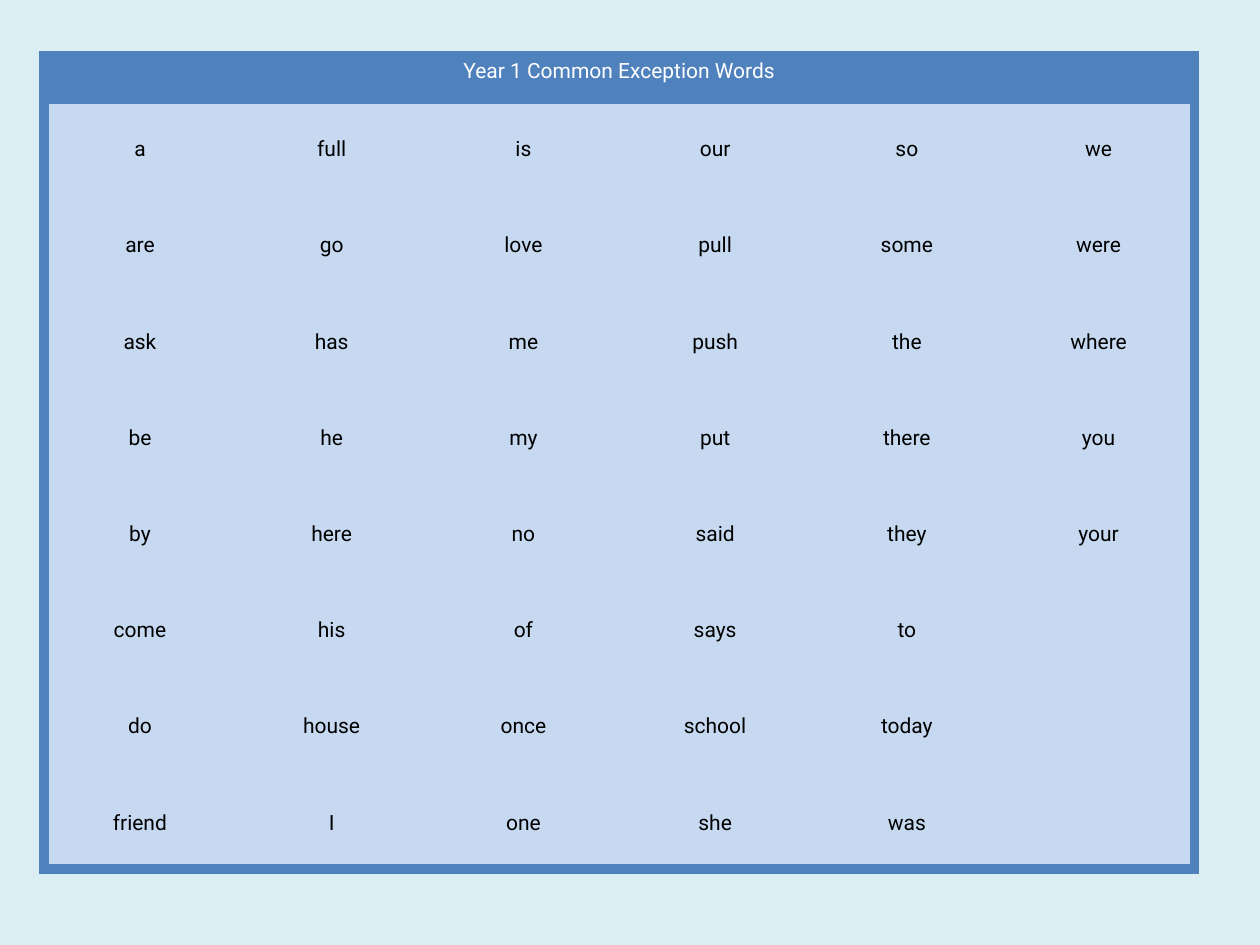
from lxml import etree
from pptx import Presentation
from pptx import util as u
from pptx.dml.color import RGBColor
from pptx.enum import text
from pptx.oxml.ns import qn

COLORS = {"background": "DBEEF4", "frame": "4F81BD", "body": "C6D9F1",
          "heading": "FFFFFF", "word": "000000"}
FONT = "Roboto"
HEADING = "Year 1 Common Exception Words"
# Alphabetical order runs down each column
WORD_COLUMNS = [column.split() for column in (
    "a are ask be by come do friend",
    "full go has he here his house I",
    "is love me my no of once one",
    "our pull push put said says school she",
    "so some the there they to today was",
    "we were where you your",
)]
WORD_ROWS = 8


def set_borders(cell, framed_sides):
    """Draw the frame on the given sides and leave the others without a line."""
    properties = cell._tc.get_or_add_tcPr()
    for position, side in enumerate("LRTB"):
        line = etree.Element(qn(f"a:ln{side}"))
        if side in framed_sides:
            line.set("w", str(u.Pt(6)))
            fill = etree.SubElement(line, qn("a:solidFill"))
            etree.SubElement(fill, qn("a:srgbClr"), val=COLORS["frame"])
        else:
            line.set("w", "0")
            etree.SubElement(line, qn("a:noFill"))
        properties.insert(position, line)


def style_cell(cell, wording, fill, color, anchor):
    cell.fill.solid()
    cell.fill.fore_color.rgb = RGBColor.from_string(COLORS[fill])
    cell.margin_left = cell.margin_right = u.Inches(0.05)
    cell.margin_top = cell.margin_bottom = 0
    cell.vertical_anchor = anchor
    cell.text = wording
    paragraph = cell.text_frame.paragraphs[0]
    paragraph.alignment = text.PP_ALIGN.CENTER
    paragraph.line_spacing = 1.15
    font = paragraph.font
    font.name, font.size, font.bold = FONT, u.Pt(12), False
    font.color.rgb = RGBColor.from_string(COLORS[color])


def add_word_table(slide, left, top, width, height):
    column_count = len(WORD_COLUMNS)
    table = slide.shapes.add_table(WORD_ROWS + 1, column_count,
                                   left, top, width, height).table
    table.first_row = table.horz_banding = False
    heading_height = u.Inches(0.35)
    for column in table.columns:
        column.width = int(width / column_count)
    for row in table.rows:
        row.height = int((height - heading_height) / WORD_ROWS)
    table.rows[0].height = heading_height

    # Heading across all columns
    heading = table.cell(0, 0)
    heading.merge(table.cell(0, column_count - 1))
    style_cell(heading, HEADING, "frame", "heading", text.MSO_ANCHOR.TOP)
    for column in range(column_count):
        set_borders(table.cell(0, column), "LRTB")

    # Words, with the frame on the outer sides only
    for column, words in enumerate(WORD_COLUMNS):
        for row in range(WORD_ROWS):
            cell = table.cell(row + 1, column)
            wording = words[row] if row < len(words) else ""
            style_cell(cell, wording, "body", "word", text.MSO_ANCHOR.MIDDLE)
            edges = {"L": column == 0, "R": column == column_count - 1,
                     "T": row == 0, "B": row == WORD_ROWS - 1}
            set_borders(cell, [side for side, outer in edges.items() if outer])


def main():
    deck = Presentation()
    deck.slide_width, deck.slide_height = u.Inches(10), u.Inches(7.5)
    slide = deck.slides.add_slide(deck.slide_layouts[6])
    slide.background.fill.solid()
    slide.background.fill.fore_color.rgb = RGBColor.from_string(COLORS["background"])
    add_word_table(slide, u.Inches(0.35), u.Inches(0.44), u.Inches(9.13), u.Inches(6.46))
    deck.save("out.pptx")


if __name__ == "__main__":
    main()
